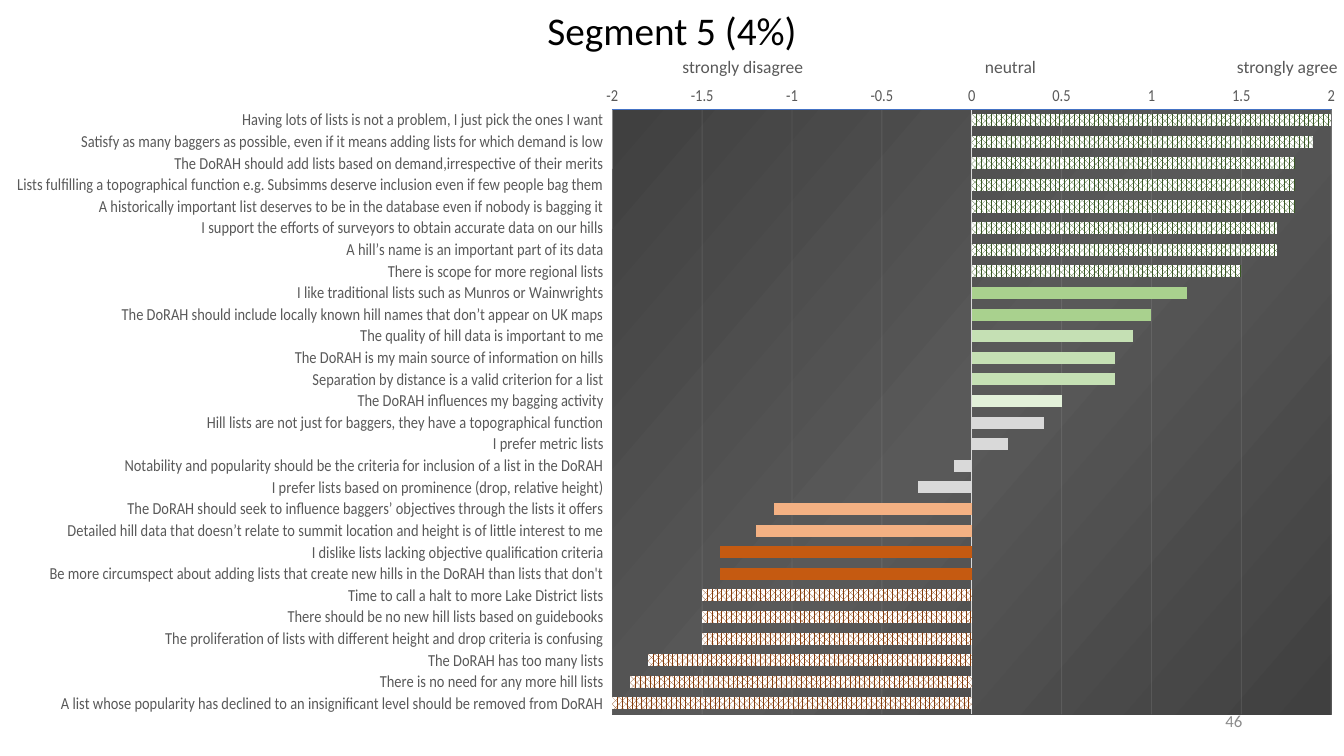
import pptx
import pptx.chart.data
import pptx.dml.color
import pptx.enum.chart
import pptx.enum.dml
import pptx.enum.text
import pptx.oxml
import pptx.oxml.ns
import pptx.util

FONT = "Calibri"
COLOURS = {
    "black": "000000", "white": "FFFFFF", "text": "595959", "number": "8C8C8C",
    "axis": "D9D9D9", "top_line": "4472C4", "grid": "F2F2F2", "series": "548235",
    "strong_agree": "385723", "agree": "A9D18E", "mild_agree": "C5E0B4",
    "slight_agree": "E2F0D9", "neutral": "D9D9D9", "disagree": "F4B183",
    "firm_disagree": "C55A11", "strong_disagree": "843C0B",
    "plot_dark": "404040", "plot_light": "595959",
}
PATTERNED = ("strong_agree", "strong_disagree")
STATEMENTS = [
    ("Having lots of lists is not a problem, I just pick the ones I want", 2, "strong_agree"),
    ("Satisfy as many baggers as possible, even if it means adding lists for which demand is low", 1.9, "strong_agree"),
    ("The DoRAH should add lists based on demand,irrespective of their merits", 1.8, "strong_agree"),
    ("Lists fulfilling a topographical function e.g. Subsimms deserve inclusion even if few people bag them", 1.8, "strong_agree"),
    ("A historically important list deserves to be in the database even if nobody is bagging it", 1.8, "strong_agree"),
    ("I support the efforts of surveyors to obtain accurate data on our hills", 1.7, "strong_agree"),
    ("A hill’s name is an important part of its data", 1.7, "strong_agree"),
    ("There is scope for more regional lists", 1.5, "strong_agree"),
    ("I like traditional lists such as Munros or Wainwrights", 1.2, "agree"),
    ("The DoRAH should include locally known hill names that don’t appear on UK maps", 1, "agree"),
    ("The quality of hill data is important to me", 0.9, "mild_agree"),
    ("The DoRAH is my main source of information on hills", 0.8, "mild_agree"),
    ("Separation by distance is a valid criterion for a list", 0.8, "mild_agree"),
    ("The DoRAH influences my bagging activity", 0.5, "slight_agree"),
    ("Hill lists are not just for baggers, they have a topographical function", 0.4, "neutral"),
    ("I prefer metric lists", 0.2, "neutral"),
    ("Notability and popularity should be the criteria for inclusion of a list in the DoRAH", -0.1, "neutral"),
    ("I prefer lists based on prominence (drop, relative height)", -0.3, "neutral"),
    ("The DoRAH should seek to influence baggers’ objectives through the lists it offers", -1.1, "disagree"),
    ("Detailed hill data that doesn’t relate to summit location and height is of little interest to me", -1.2, "disagree"),
    ("I dislike lists lacking objective qualification criteria", -1.4, "firm_disagree"),
    ("Be more circumspect about adding lists that create new hills in the DoRAH than lists that don't", -1.4, "firm_disagree"),
    ("Time to call a halt to more Lake District lists", -1.5, "strong_disagree"),
    ("There should be no new hill lists based on guidebooks", -1.5, "strong_disagree"),
    ("The proliferation of lists with different height and drop criteria is confusing", -1.5, "strong_disagree"),
    ("The DoRAH has too many lists", -1.8, "strong_disagree"),
    ("There is no need for any more hill lists", -1.9, "strong_disagree"),
    ("A list whose popularity has declined to an insignificant level should be removed from DoRAH", -2, "strong_disagree"),
]
SCALE_LABELS = [("strongly disagree", 6.67), ("neutral", 9.67), ("strongly agree", 12.17)]
PLOT_PERCENT = {"x": 51.4, "y": 5.1, "w": 63.4, "h": 91.5}


def rgb(name):
    """Return the named colour."""
    return pptx.dml.color.RGBColor.from_string(COLOURS[name])


def inches(box):
    """Turn a box in inches into slide lengths."""
    return [pptx.util.Inches(length) for length in box]


def write_text(shape, text, size, colour, alignment):
    """Fill a shape with one formatted line of text."""
    shape.text_frame.text = text
    paragraph = shape.text_frame.paragraphs[0]
    paragraph.alignment = alignment
    font = paragraph.runs[0].font
    font.name, font.size = FONT, pptx.util.Pt(size)
    font.color.rgb = rgb(colour)
    return paragraph


def add_title(slide, box):
    """Place the title in its box."""
    title = slide.shapes.title
    title.left, title.top, title.width, title.height = inches(box)
    paragraph = write_text(title, "Segment 5 (4%)", 28, "black", pptx.enum.text.PP_ALIGN.CENTER)
    paragraph.line_spacing = 0.9
    title.text_frame.vertical_anchor = pptx.enum.text.MSO_ANCHOR.MIDDLE


def add_label(slide, box, text, size, colour, alignment):
    """Add a text box with one line."""
    label = slide.shapes.add_textbox(*inches(box))
    label.text_frame.word_wrap = True
    write_text(label, text, size, colour, alignment)
    return label


def add_scale_labels(slide, top):
    """Name the ends and the middle of the scale."""
    for text, left in SCALE_LABELS:
        width = min(1.52, 13.33 - left)
        label = add_label(slide, (left, top, width, 0.31), text, 12.5, "text",
                          pptx.enum.text.PP_ALIGN.LEFT)
        label.text_frame.margin_right = 0


def style_axis(axis, line_colour):
    """Format the line and the tick labels of an axis."""
    axis.major_tick_mark = pptx.enum.chart.XL_TICK_MARK.NONE
    axis.minor_tick_mark = pptx.enum.chart.XL_TICK_MARK.NONE
    axis.format.line.color.rgb = rgb(line_colour)
    axis.format.line.width = pptx.util.Pt(0.75)
    font = axis.tick_labels.font
    font.name, font.size = FONT, pptx.util.Pt(12)
    font.color.rgb = rgb("text")


def style_plot_area(chart):
    """Fix the inner plot area and give it a dark radial gradient."""
    namespaces = pptx.oxml.ns.nsdecls("c", "a")
    plot_area = chart.plots[0]._element.getparent()
    for layout in plot_area.findall(pptx.oxml.ns.qn("c:layout")):
        plot_area.remove(layout)
    modes = '<c:xMode val="edge"/><c:yMode val="edge"/>'
    shares = "".join(f'<c:{key} val="{percent / 100:.3f}"/>'
                     for key, percent in PLOT_PERCENT.items())
    plot_area.insert(0, pptx.oxml.parse_xml(
        f'<c:layout {namespaces}><c:manualLayout><c:layoutTarget val="inner"/>'
        f'{modes}{shares}</c:manualLayout></c:layout>'))
    stops = "".join(
        f'<a:gs pos="{position}"><a:srgbClr val="{COLOURS[name]}"/></a:gs>'
        for position, name in ((0, "plot_dark"), (50000, "plot_light"), (100000, "plot_dark")))
    plot_area.append(pptx.oxml.parse_xml(
        f'<c:spPr {namespaces}><a:gradFill><a:gsLst>{stops}</a:gsLst><a:path path="circle">'
        '<a:fillToRect l="100000" t="100000"/></a:path></a:gradFill>'
        '<a:ln><a:noFill/></a:ln></c:spPr>'))


def colour_bars(series):
    """Colour each bar by its strength of agreement."""
    series.invert_if_negative = False
    series.format.fill.solid()
    series.format.fill.fore_color.rgb = rgb("series")
    for index, (_, _, level) in enumerate(STATEMENTS):
        fill = series.points[index].format.fill
        if level in PATTERNED:
            fill.patterned()
            fill.pattern = pptx.enum.dml.MSO_PATTERN.PERCENT_70
            fill.back_color.rgb = rgb("white")
        else:
            fill.solid()
        fill.fore_color.rgb = rgb(level)


def add_agreement_chart(slide, box):
    """Add the bar chart of mean agreement with each statement."""
    data = pptx.chart.data.CategoryChartData()
    data.categories = [statement for statement, _, _ in STATEMENTS]
    data.add_series("Series 1", [value for _, value, _ in STATEMENTS])
    chart = slide.shapes.add_chart(
        pptx.enum.chart.XL_CHART_TYPE.BAR_CLUSTERED, *inches(box), data).chart
    chart.has_title = chart.has_legend = False
    chart.font.name, chart.font.size = FONT, pptx.util.Pt(10)
    chart.font.color.rgb = rgb("black")
    chart.plots[0].gap_width = 80
    chart.plots[0].vary_by_categories = False
    categories, values = chart.category_axis, chart.value_axis
    style_axis(categories, "axis")
    categories.reverse_order = True
    categories.tick_label_position = pptx.enum.chart.XL_TICK_LABEL_POSITION.LOW
    style_axis(values, "top_line")
    values.minimum_scale, values.maximum_scale, values.major_unit = -2, 2, 0.5
    values.tick_labels.number_format = "General"
    values.tick_labels.number_format_is_linked = False
    grid_line = values.major_gridlines.format.line
    grid_line.color.rgb = rgb("grid")
    grid_line.width = pptx.util.Pt(0.75)
    grid_colour = grid_line._ln.find(".//" + pptx.oxml.ns.qn("a:srgbClr"))
    grid_colour.append(pptx.oxml.parse_xml(
        f'<a:alpha {pptx.oxml.ns.nsdecls("a")} val="10000"/>'))
    colour_bars(chart.plots[0].series[0])
    style_plot_area(chart)


def main():
    """Build the slide and save it."""
    presentation = pptx.Presentation()
    presentation.slide_width, presentation.slide_height = inches((13.33, 7.5))
    slide = presentation.slides.add_slide(presentation.slide_layouts[5])
    add_title(slide, (2.96, 0.14, 7.41, 0.38))
    add_scale_labels(slide, 0.51)
    add_agreement_chart(slide, (0.17, 0.75, 13.07, 6.56))
    number = add_label(slide, (9.42, 6.95, 3, 0.4), "46", 12, "number",
                       pptx.enum.text.PP_ALIGN.RIGHT)
    number.text_frame.vertical_anchor = pptx.enum.text.MSO_ANCHOR.MIDDLE
    presentation.save("out.pptx")


if __name__ == "__main__":
    main()
